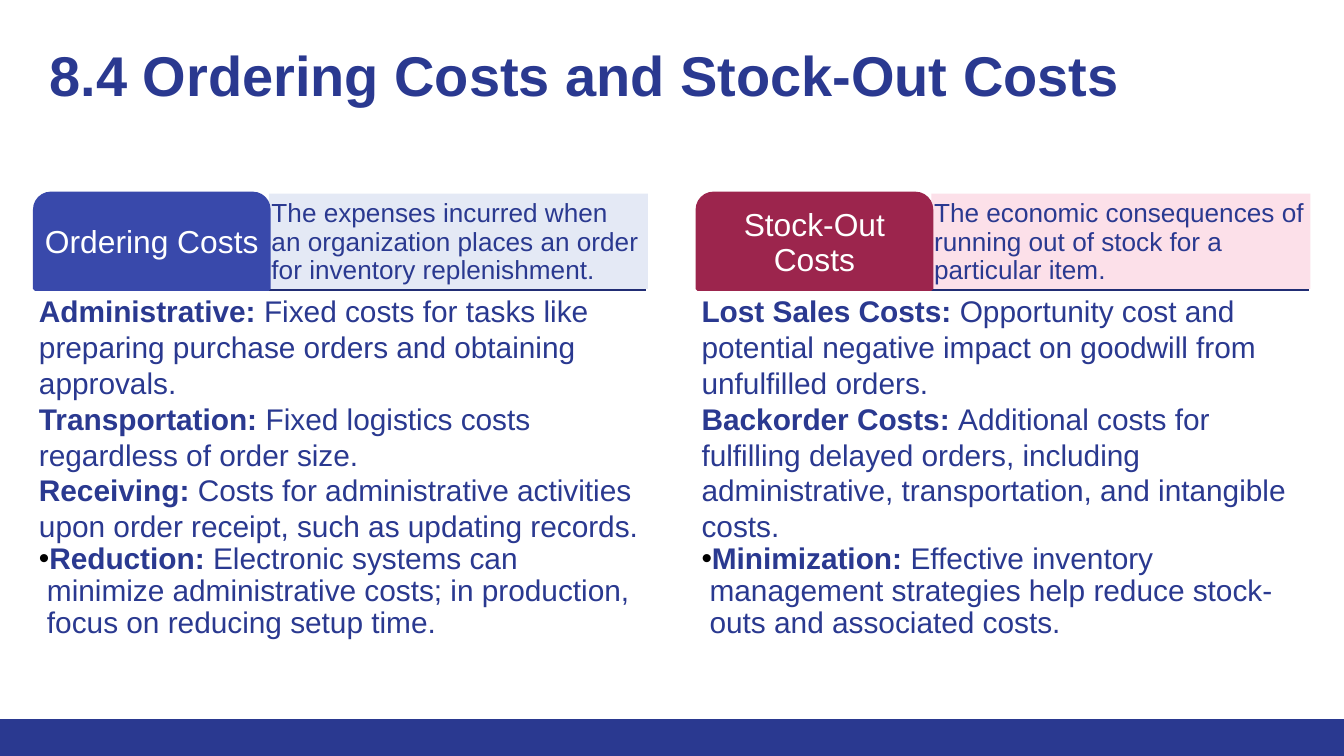
from typing import NamedTuple

from lxml.etree import SubElement
from pptx import Presentation
from pptx.dml.color import RGBColor
from pptx.enum.shapes import MSO_CONNECTOR as Link, MSO_SHAPE as Form
from pptx.enum.text import MSO_ANCHOR as Anchor, PP_ALIGN as Align
from pptx.oxml.ns import qn
from pptx.util import Inches, Pt

WIDE = 10
HIGH = WIDE * 9 / 16
NAVY, RULE, WHITE = "2A3990", "212D74", "FFFFFF"
TOP, BASE, FOOT = 1.44, 2.15, 5.35
LEFT, STEP, SPAN = 0.26, 4.93, 4.55
TAB = 1.74
PAD = 0.03


class Box(NamedTuple):
    x: float
    y: float
    w: float
    h: float


class Item(NamedTuple):
    term: str
    text: str


class Panel(NamedTuple):
    name: str
    about: str
    dark: str
    pale: str
    items: list[Item]


PANELS = [
    Panel(
        "Ordering Costs",
        "The expenses incurred when an organization places an order for inventory replenishment.",
        "3949AB", "E4E9F5",
        [
            Item("Administrative: ", "Fixed costs for tasks like preparing purchase orders and obtaining approvals."),
            Item("Transportation: ", "Fixed logistics costs regardless of order size."),
            Item("Receiving: ", "Costs for administrative activities upon order receipt, such as updating records."),
            Item("Reduction: ", "Electronic systems can minimize administrative costs; "
                 "in production, focus on reducing setup time."),
        ],
    ),
    Panel(
        "Stock-Out Costs",
        "The economic consequences of running out of stock for a particular item.",
        "9C254D", "FCE0E9",
        [
            Item("Lost Sales Costs: ", "Opportunity cost and potential negative impact on goodwill "
                 "from unfulfilled orders."),
            Item("Backorder Costs: ", "Additional costs for fulfilling delayed orders, including "
                 "administrative, transportation, and intangible costs."),
            Item("Minimization: ", "Effective inventory management strategies help reduce "
                 "stock-outs and associated costs."),
        ],
    ),
]


def tint(code: str) -> RGBColor:
    return RGBColor.from_string(code)


def place(box: Box) -> list[int]:
    return [Inches(v) for v in box]


def add_run(para, text: str, size: float, color: str, bold: bool = False) -> None:
    run = para.add_run()
    run.text = text
    font = run.font
    font.name, font.size, font.bold = "Arial", Pt(size), bold
    font.color.rgb = tint(color)


def set_frame(shape, anchor, left: float, top: float, right: float, foot: float):
    frame = shape.text_frame
    frame.word_wrap = True
    frame.vertical_anchor = anchor
    frame.margin_left, frame.margin_top = Inches(left), Inches(top)
    frame.margin_right, frame.margin_bottom = Inches(right), Inches(foot)
    return frame


def add_form(slide, form, box: Box, fill: str, edge: bool = False):
    shape = slide.shapes.add_shape(form, *place(box))
    shape.shadow.inherit = False
    shape.fill.solid()
    shape.fill.fore_color.rgb = tint(fill)
    if edge:
        shape.line.color.rgb = tint(fill)
        shape.line.width = Pt(2)
    else:
        shape.line.fill.background()
    return shape


def add_rule(slide, x: float, y: float, w: float) -> None:
    rule = slide.shapes.add_connector(Link.STRAIGHT, *place(Box(x, y, x + w, y)))
    rule.line.color.rgb = tint(RULE)
    rule.line.width = Pt(2)
    SubElement(rule._element.spPr, qn("a:effectLst"))


def add_bullet(para) -> None:
    """Give the paragraph a black bullet with a hanging indent."""
    props = para._p.get_or_add_pPr()
    props.set("marL", str(Inches(0.06)))
    props.set("indent", str(-Inches(0.06)))
    shade = SubElement(props, qn("a:buClr"))
    SubElement(shade, qn("a:srgbClr")).set("val", "000000")
    SubElement(props, qn("a:buFont")).set("typeface", "Arial")
    SubElement(props, qn("a:buChar")).set("char", "•")


def add_items(slide, box: Box, items: list[Item]) -> None:
    """List the items; the last one is the bulleted advice."""
    frame = set_frame(slide.shapes.add_textbox(*place(box)), Anchor.TOP, PAD, PAD, PAD, PAD)
    for i, item in enumerate(items):
        para = frame.add_paragraph() if i else frame.paragraphs[0]
        add_run(para, item.term, 16, NAVY, True)
        add_run(para, item.text, 16, NAVY)
    para.line_spacing = 0.9
    add_bullet(para)


def add_panel(slide, x: float, panel: Panel) -> None:
    add_rule(slide, x, BASE, SPAN)

    about = add_form(slide, Form.RECTANGLE, Box(x + TAB, TOP, SPAN - TAB + 0.01, BASE - TOP), panel.pale)
    para = set_frame(about, Anchor.BOTTOM, 0.02, PAD, 0.04, PAD).paragraphs[0]
    para.alignment, para.line_spacing = Align.LEFT, 0.9
    add_run(para, panel.about, 14, NAVY)

    tab = add_form(slide, Form.ROUND_2_SAME_RECTANGLE, Box(x, TOP, TAB, BASE - TOP), panel.dark, True)
    para = set_frame(tab, Anchor.MIDDLE, PAD, PAD, PAD, PAD).paragraphs[0]
    para.alignment, para.line_spacing = Align.CENTER, 0.9
    add_run(para, panel.name, 17, WHITE)

    add_items(slide, Box(x, BASE, SPAN, 2.85), panel.items)


def main() -> None:
    deck = Presentation()
    deck.slide_width, deck.slide_height = Inches(WIDE), Inches(HIGH)
    slide = deck.slides.add_slide(deck.slide_layouts[6])

    add_form(slide, Form.RECTANGLE, Box(0, FOOT, WIDE, HIGH - FOOT), NAVY)
    title = slide.shapes.add_textbox(*place(Box(0.27, 0.2, 9.48, 0.89)))
    frame = set_frame(title, Anchor.TOP, 0.1, 0.1, 0.1, 0.1)
    add_run(frame.paragraphs[0], "8.4 Ordering Costs and Stock-Out Costs", 30, NAVY, True)

    for i, panel in enumerate(PANELS):
        add_panel(slide, LEFT + i * STEP, panel)
    deck.save("out.pptx")


if __name__ == "__main__":
    main()
